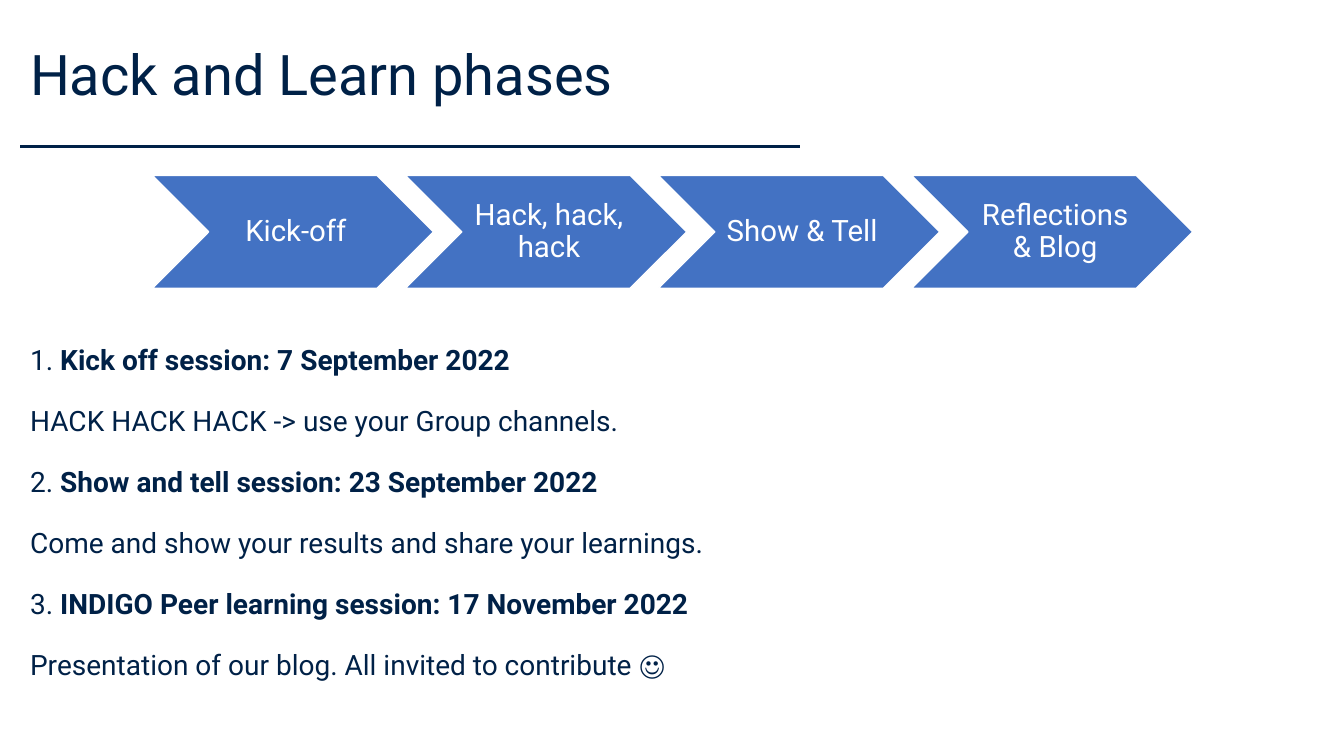
import pptx
import pptx.util
import pptx.dml.color
import pptx.enum.shapes
import pptx.enum.text
import pptx.oxml.ns
import lxml.etree

Inches = pptx.util.Inches
Pt = pptx.util.Pt
RGBColor = pptx.dml.color.RGBColor

NAVY = RGBColor(0x00, 0x21, 0x47)
BLUE = RGBColor(0x43, 0x72, 0xC3)
WHITE = RGBColor(0xFF, 0xFF, 0xFF)

PHASES = ["Kick-off", "Hack, hack, hack", "Show & Tell ", "Reflections & Blog"]
CHEVRON_LEFT = 1.51
CHEVRON_PITCH = 2.51

# Each line is a plain start and a bold rest
SESSIONS = [
    ("1. ", "Kick off session: 7 September 2022"),
    ("HACK HACK HACK -> use your Group channels.", ""),
    ("2. ", "Show and tell session: 23 September 2022"),
    ("Come and show your results and share your learnings.", ""),
    ("3. ", "INDIGO Peer learning session: 17 November 2022"),
    ("Presentation of our blog. All invited to contribute ☺", ""),
]


class SlideBuilder:
    font_name = "Roboto"

    def __init__(self, page):
        self.page = page

    def set_frame(self, shape, insets):
        """Wrap and centre the text vertically; insets are left, top, right, bottom."""
        frame = shape.text_frame
        frame.word_wrap = True
        frame.vertical_anchor = pptx.enum.text.MSO_ANCHOR.MIDDLE
        (frame.margin_left, frame.margin_top,
         frame.margin_right, frame.margin_bottom) = map(Inches, insets)
        return frame

    def style(self, span, size, color, bold=False):
        span.font.name = self.font_name
        span.font.size = Pt(size)
        span.font.color.rgb = color
        span.font.bold = bold

    def title(self, text, left, top, width, height):
        box = self.page.shapes.add_textbox(*map(Inches, (left, top, width, height)))
        frame = self.set_frame(box, (0.1, 0.05, 0.1, 0.05))
        frame.text = text
        self.style(frame.paragraphs[0].runs[0], 40, NAVY)

    def rule(self, left, right, top):
        line = self.page.shapes.add_connector(
            pptx.enum.shapes.MSO_CONNECTOR.STRAIGHT,
            Inches(left), Inches(top), Inches(right), Inches(top))
        line.line.color.rgb = NAVY
        line.line.width = Pt(2)
        lxml.etree.SubElement(line._element.spPr, pptx.oxml.ns.qn("a:effectLst"))

    def chevron(self, text, left, top, width, height):
        shape = self.page.shapes.add_shape(
            pptx.enum.shapes.MSO_SHAPE.CHEVRON,
            *map(Inches, (left, top, width, height)))
        shape.shadow.inherit = False
        shape.fill.solid()
        shape.fill.fore_color.rgb = BLUE
        shape.line.color.rgb = WHITE
        shape.line.width = Pt(1)
        frame = self.set_frame(shape, (0.09, 0.03, 0.03, 0.03))
        frame.text = text
        para = frame.paragraphs[0]
        para.alignment = pptx.enum.text.PP_ALIGN.CENTER
        para.line_spacing = 0.9
        self.style(para.runs[0], 21, WHITE)

    def session_list(self, sessions, left, top, width, height):
        box = self.page.shapes.add_textbox(*map(Inches, (left, top, width, height)))
        frame = self.set_frame(box, (0.1, 0.05, 0.1, 0.36))
        for index, (plain, strong) in enumerate(sessions):
            para = frame.add_paragraph() if index else frame.paragraphs[0]
            para.line_spacing = 0.9
            para.space_before = Pt(22 if index else 0)
            for text, bold in ((plain, False), (strong, True)):
                if text:
                    span = para.add_run()
                    span.text = text
                    self.style(span, 20, NAVY, bold)


def main():
    deck = pptx.Presentation()
    deck.slide_width = Inches(13.33)
    deck.slide_height = Inches(7.5)
    builder = SlideBuilder(deck.slides.add_slide(deck.slide_layouts[6]))

    builder.title("Hack and Learn phases", 0.2, 0, 7.98, 1.45)
    builder.rule(0.2, 7.93, 1.45)
    for index, phase in enumerate(PHASES):
        builder.chevron(phase, CHEVRON_LEFT + index * CHEVRON_PITCH, 1.74, 2.79, 1.12)
    builder.session_list(SESSIONS, 0.2, 3.12, 13.05, 4.27)

    deck.save("out.pptx")


if __name__ == "__main__":
    main()
